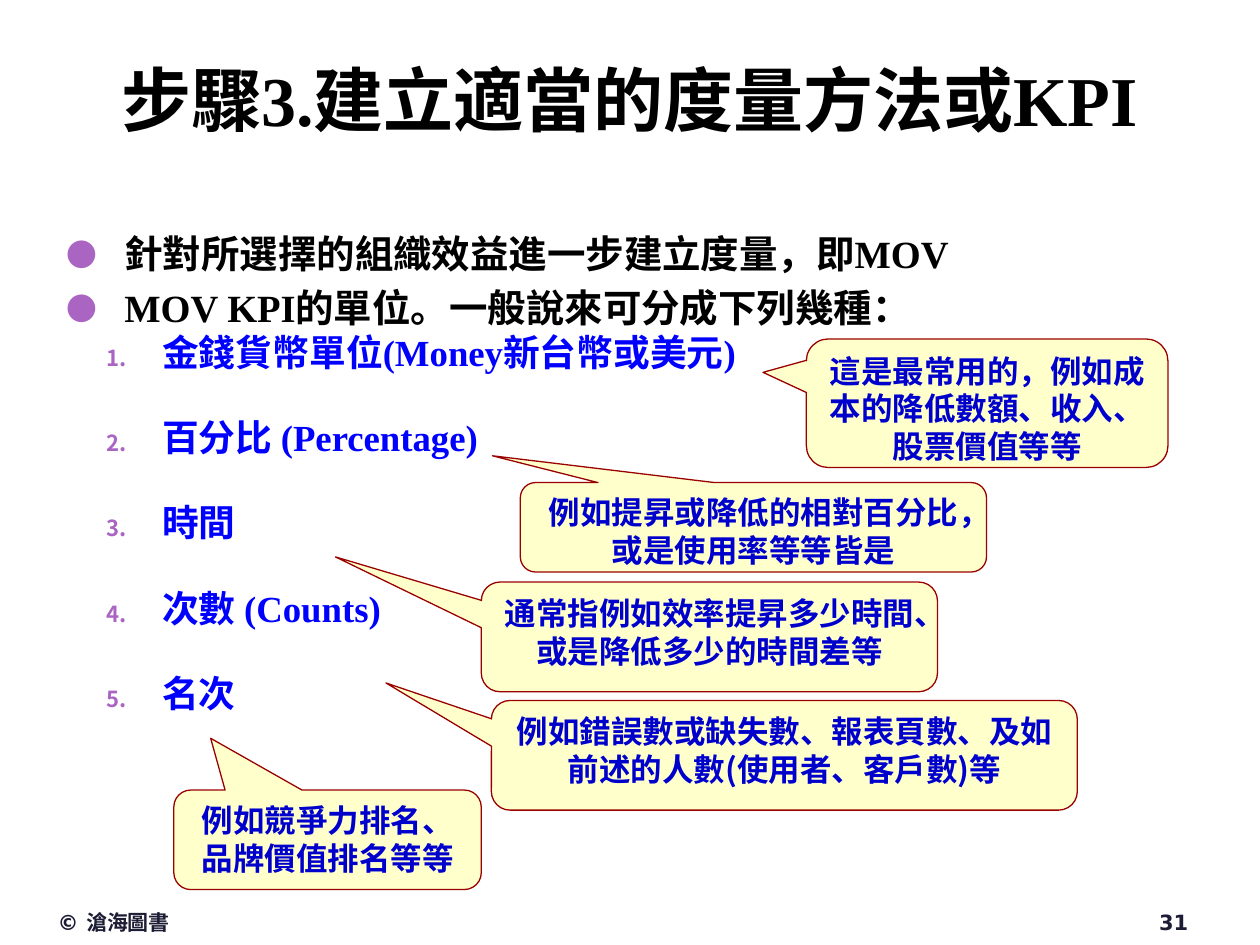
from lxml import etree
from pptx import Presentation
from pptx.dml.color import RGBColor
from pptx.enum.shapes import MSO_SHAPE
from pptx.enum.text import MSO_ANCHOR, PP_ALIGN
from pptx.oxml.ns import qn
from pptx.util import Inches, Pt

CALLOUT = MSO_SHAPE.ROUNDED_RECTANGULAR_CALLOUT
TOP, MIDDLE = MSO_ANCHOR.TOP, MSO_ANCHOR.MIDDLE
LEFT, CENTER, RIGHT = PP_ALIGN.LEFT, PP_ALIGN.CENTER, PP_ALIGN.RIGHT
SERIF, SANS, CJK, FOOTER = "Times New Roman", "Arial", "Noto Sans CJK SC", "DejaVu Sans"
BLACK, BLUE, NAVY, DARK = "000000", "0000FF", "0000CC", "1C1C34"
CREAM, MAROON, PURPLE = "FFFFCC", "990000", "AA65C3"

BULLETS = ["針對所選擇的組織效益進一步建立度量，即MOV",
           "MOV KPI的單位。一般說來可分成下列幾種："]
UNITS = ["金錢貨幣單位(Money新台幣或美元)", "百分比 (Percentage)", "時間",
         "次數 (Counts)", "名次"]
# box, pointer tip, font, text
CALLOUTS = [
    ((6.4, 2.69, 2.87, 1.02), (-0.62, -0.24), SANS,
     "這是最常用的，例如成本的降低數額、收入、股票價值等等"),
    ((4.13, 3.83, 3.7, 0.71), (-0.56, -0.8), SANS,
     "例如提昇或降低的相對百分比，或是使用率等等皆是"),
    ((3.82, 4.62, 3.62, 0.87), (-0.82, -0.73), SANS,
     "通常指例如效率提昇多少時間、或是降低多少的時間差等"),
    ((3.9, 5.56, 4.65, 0.87), (-0.68, -0.66), CJK,
     "例如錯誤數或缺失數、報表頁數、及如前述的人數(使用者、客戶數)等"),
    ((1.38, 6.27, 2.44, 0.79), (-0.38, -1.02), SANS,
     "例如競爭力排名、品牌價值排名等等"),
]


def rgb(value):
    return RGBColor.from_string(value)


def add_run(p, text, font, size, color):
    r = p.add_run()
    r.text = text
    for name, value in {"name": font, "size": Pt(size), "bold": True}.items():
        setattr(r.font, name, value)
    r.font.color.rgb = rgb(color)
    ea = etree.SubElement(r.font._element, qn("a:ea"))
    ea.set("typeface", CJK)


def add_text_box(s, box, anchor=TOP):
    tf = s.shapes.add_textbox(*map(Inches, box)).text_frame
    tf.word_wrap = True
    tf.vertical_anchor = anchor
    return tf


def add_label(s, box, text, font, size, color, align=LEFT, anchor=TOP):
    p = add_text_box(s, box, anchor).paragraphs[0]
    p.alignment = align
    add_run(p, text, font, size, color)


def set_bullet(p, margin, hanging, percent, tag, **attrs):
    pPr = p._p.get_or_add_pPr()
    pPr.set("marL", str(Inches(margin)))
    pPr.set("indent", str(-Inches(hanging)))
    color = etree.SubElement(pPr, qn("a:buClr"))
    etree.SubElement(color, qn("a:srgbClr")).set("val", PURPLE)
    etree.SubElement(pPr, qn("a:buSzPct")).set("val", str(percent * 1000))
    etree.SubElement(pPr, qn("a:buFont")).set("typeface", CJK)
    bullet = etree.SubElement(pPr, qn(tag))
    for name, value in attrs.items():
        bullet.set(name, value)


def add_body(s):
    tf = add_text_box(s, (0.43, 1.78, 9, 5.14))
    for i, text in enumerate(BULLETS):
        p = tf.add_paragraph() if i else tf.paragraphs[0]
        set_bullet(p, 0.46, 0.46, 80, "a:buChar", char="●")
        if i:
            p.space_before = Pt(4.4)
        add_run(p, text, SERIF, 22, BLACK)
    for i, text in enumerate(UNITS):
        p = tf.add_paragraph()
        p.level = 1
        set_bullet(p, 0.76, 0.44, 60, "a:buAutoNum", type="arabicPeriod")
        p.line_spacing = 0.8
        p.space_before = Pt(28.6 if i else 4.2)
        add_run(p, text, SERIF, 21, BLUE)


def add_callout(s, box, tip, font, text):
    sp = s.shapes.add_shape(CALLOUT, *map(Inches, box))
    sp.shadow.inherit = False
    for i, value in enumerate((*tip, 0.17)):
        sp.adjustments[i] = value
    sp.fill.solid()
    sp.fill.fore_color.rgb = rgb(CREAM)
    sp.line.color.rgb = rgb(MAROON)
    sp.line.width = Pt(0.75)
    tf = sp.text_frame
    tf.word_wrap = True
    tf.vertical_anchor = TOP
    p = tf.paragraphs[0]
    p.alignment = CENTER
    add_run(p, text, font, 18, NAVY)


def main():
    prs = Presentation()
    prs.slide_width, prs.slide_height = Inches(10), Inches(7.5)
    s = prs.slides.add_slide(prs.slide_layouts[6])
    add_label(s, (0.5, 0.33, 8.99, 0.9), "步驟3.建立適當的度量方法或KPI",
              SERIF, 40, BLACK, CENTER, MIDDLE)
    add_body(s)
    add_label(s, (0.36, 7.17, 2.75, 0.33), "© 滄海圖書", FOOTER, 12, DARK)
    add_label(s, (7.2, 7.17, 2.33, 0.33), "31", FOOTER, 12, DARK, RIGHT)
    for callout in CALLOUTS:
        add_callout(s, *callout)
    prs.save("out.pptx")


if __name__ == "__main__":
    main()
